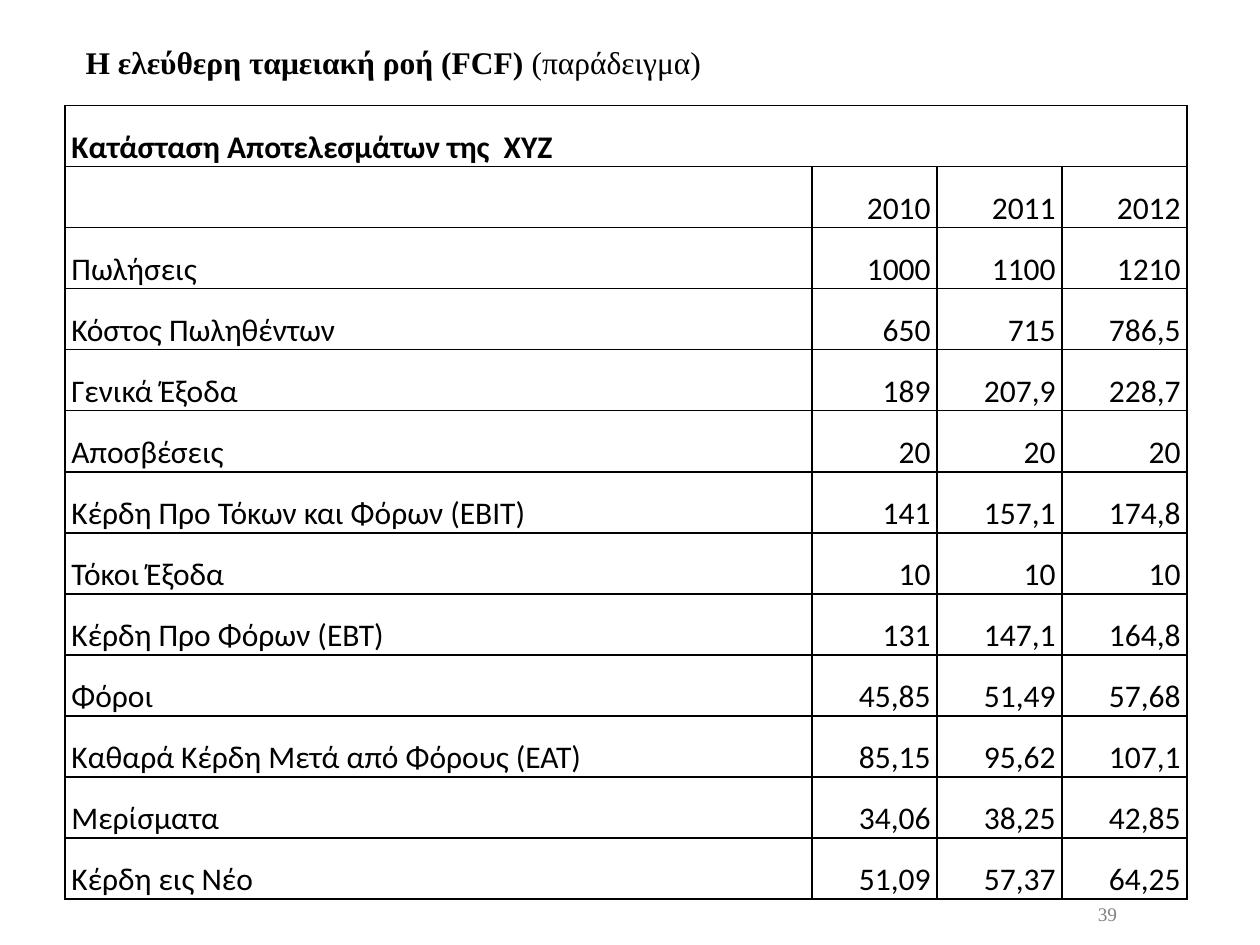
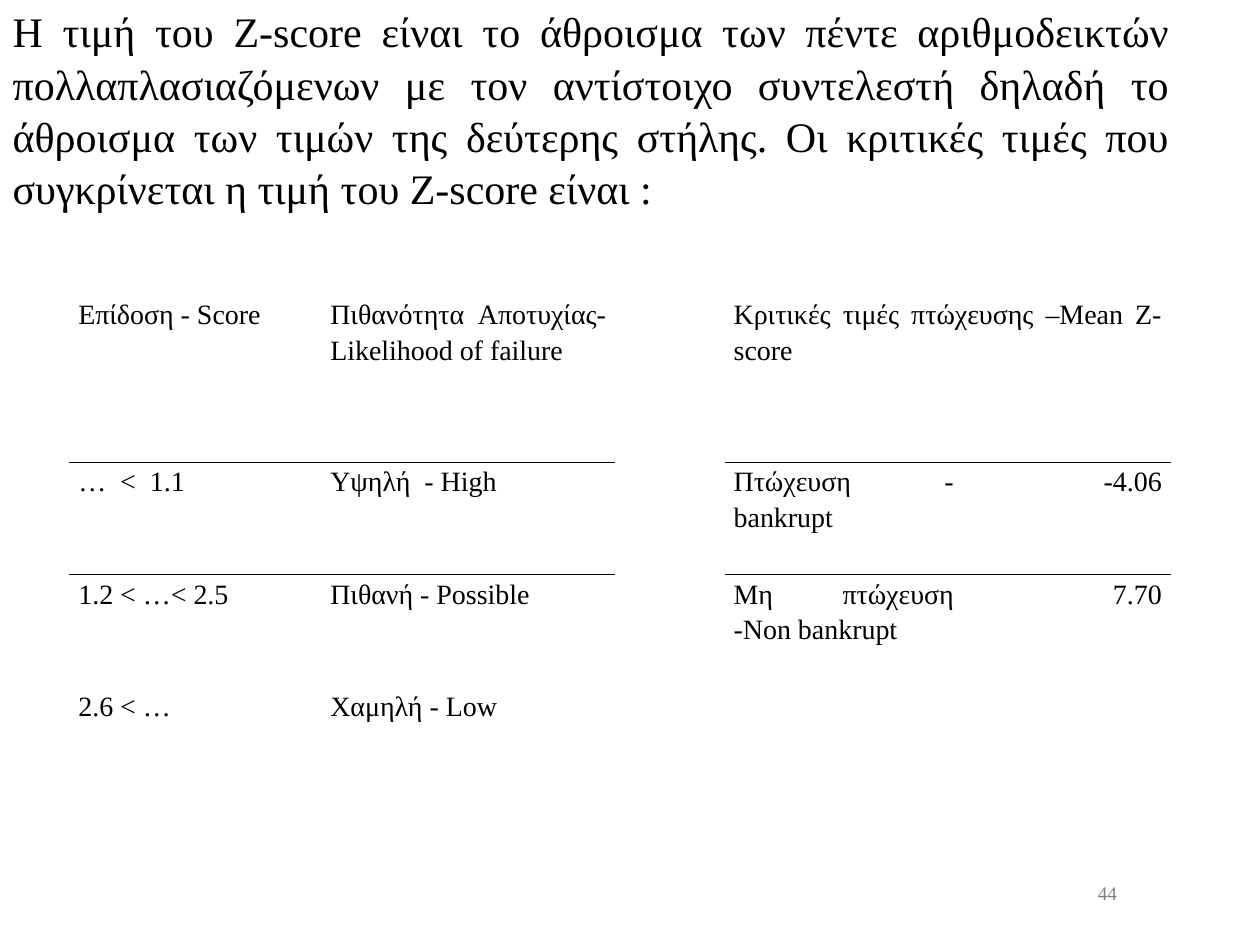
"""Builds two finance slides: an income statement and the Z-score critical values."""
from lxml.etree import SubElement
from pptx import Presentation
from pptx.dml.color import RGBColor
from pptx.enum.text import MSO_ANCHOR, MSO_AUTO_SIZE, PP_ALIGN
from pptx.oxml.ns import qn
from pptx.util import Cm, Pt

COLORS = {"text": "000000", "rule": "000000", "page": "808080"}
SERIF, SANS = "Times New Roman", "Calibri"
NO_STYLE = "{2D5ABB26-0587-4C30-8999-92F81FD0307C}"


def format_text(paragraph, font, size, align, color="text"):
    paragraph.alignment = align
    for run in paragraph.runs:
        run.font.name = font
        run.font.size = Pt(size)
        run.font.color.rgb = RGBColor.from_string(COLORS[color])


def add_grid(slide, rows, left, top, widths, heights, font, size, margin, spacing, anchor, borders):
    total_width, total_height = sum(widths), sum(heights)
    grid = slide.shapes.add_table(len(rows), len(widths), Cm(left), Cm(top),
                                  Cm(total_width), Cm(total_height)).table
    grid.first_row = grid.horz_banding = False
    grid._tbl.tblPr.find(qn("a:tableStyleId")).text = NO_STYLE
    for column, width in zip(grid.columns, widths):
        column.width = Cm(width)
    for row, height in zip(grid.rows, heights):
        row.height = Cm(height)
    for r, values in enumerate(rows):
        for c, value in enumerate(values):
            cell = grid.cell(r, c)
            cell.margin_left = cell.margin_right = Cm(margin)
            cell.margin_top = cell.margin_bottom = 0
            cell.vertical_anchor = anchor
            for side in borders(r, c):
                line = SubElement(cell._tc.get_or_add_tcPr(), qn(f"a:ln{side}"), w=str(Pt(1)))
                SubElement(SubElement(line, qn("a:solidFill")), qn("a:srgbClr"), val=COLORS["rule"])
            cell.fill.background()
            if value:
                cell.text_frame.text = value
                paragraph = cell.text_frame.paragraphs[0]
                paragraph.line_spacing = spacing
                is_number = value.lstrip("-").replace(",", "").replace(".", "").isdigit()
                format_text(paragraph, font, size, PP_ALIGN.RIGHT if is_number else PP_ALIGN.JUSTIFY)
    return grid


income_rows = [
    ("Κατάσταση Αποτελεσμάτων της  XYZ", "", "", ""),
    ("", "2010", "2011", "2012"),
    ("Πωλήσεις", "1000", "1100", "1210"),
    ("Κόστος Πωληθέντων", "650", "715", "786,5"),
    ("Γενικά Έξοδα", "189", "207,9", "228,7"),
    ("Αποσβέσεις", "20", "20", "20"),
    ("Κέρδη Προ Τόκων και Φόρων (EBIT)", "141", "157,1", "174,8"),
    ("Τόκοι Έξοδα", "10", "10", "10"),
    ("Κέρδη Προ Φόρων (EBT)", "131", "147,1", "164,8"),
    ("Φόροι", "45,85", "51,49", "57,68"),
    ("Καθαρά Κέρδη Μετά από Φόρους (EAT)", "85,15", "95,62", "107,1"),
    ("Μερίσματα", "34,06", "38,25", "42,85"),
    ("Κέρδη εις Νέο", "51,09", "57,37", "64,25"),
]
score_rows = [
    ("Επίδοση - Score", "Πιθανότητα Αποτυχίας- Likelihood of failure", "",
     "Κριτικές τιμές πτώχευσης –Mean Z-score", ""),
    ("…  <  1.1", "Υψηλή  - High", "", "Πτώχευση - bankrupt", "-4.06"),
    ("1.2 < …< 2.5", "Πιθανή - Possible", "", "Μη πτώχευση -Non bankrupt", "7.70"),
    ("2.6 < …", "Χαμηλή - Low", "", "", ""),
]
headings = [
    (("Η ελεύθερη ταμειακή ροή (FCF)", " (παράδειγμα)"), (1.47, 0.74, 22.43, 1.02),
     18, PP_ALIGN.LEFT, MSO_ANCHOR.TOP, 1, "39", 18.21),
    (("Η τιμή του Z-score είναι το άθροισμα των πέντε αριθμοδεικτών πολλαπλασιαζόμενων με τον "
      "αντίστοιχο συντελεστή δηλαδή το άθροισμα των τιμών της δεύτερης στήλης. Οι κριτικές τιμές "
      "που συγκρίνεται η τιμή του Z-score είναι :",), (0, 0, 23.83, 4.37),
     24, PP_ALIGN.JUSTIFY, MSO_ANCHOR.MIDDLE, 1.04, "44", 17.78),
]

deck = Presentation()
deck.slide_width, deck.slide_height = Cm(25.4), Cm(19.05)

for parts, place, size, align, anchor, spacing, page, page_top in headings:
    slide = deck.slides.add_slide(deck.slide_layouts[5])
    title = slide.shapes.title
    title.left, title.top, title.width, title.height = map(Cm, place)
    title.text_frame.auto_size = MSO_AUTO_SIZE.NONE
    title.text_frame.word_wrap = True
    title.text_frame.vertical_anchor = anchor
    heading = title.text_frame.paragraphs[0]
    heading.line_spacing = spacing
    for part in parts:
        heading.add_run().text = part
    heading.runs[0].font.bold = len(parts) > 1
    format_text(heading, SERIF, size, align)

    page_number = slide.shapes.add_textbox(Cm(21.59), Cm(page_top), Cm(1.47), Cm(0.43)).text_frame
    page_number.margin_left = page_number.margin_right = 0
    page_number.margin_top = page_number.margin_bottom = 0
    page_number.word_wrap = True
    page_number.vertical_anchor = MSO_ANCHOR.MIDDLE
    page_number.text = page
    format_text(page_number.paragraphs[0], SERIF, 11, PP_ALIGN.CENTER, "page")

income_slide, score_slide = deck.slides

income = add_grid(income_slide, income_rows, 1.31, 2.13, [15.06] + [2.52] * 3,
                  [1.23] * len(income_rows), SANS, 18, 0.13, 1.5, MSO_ANCHOR.BOTTOM,
                  lambda r, c: "LRTB")
income.cell(0, 0).merge(income.cell(0, 3))
income.cell(0, 0).text_frame.paragraphs[0].runs[0].font.bold = True

scores = add_grid(score_slide, score_rows, 1.4, 5.94, [5.08, 5.92, 2.21, 4.8, 4.19],
                  [3.38, 2.26, 2.26, 1.13], SERIF, 16, 0.18, 1.15, MSO_ANCHOR.TOP,
                  lambda r, c: {0: "B", 1: "T"}.get(r, "") if c != 2 else "")
scores.cell(0, 2).merge(scores.cell(3, 2))
scores.cell(0, 3).merge(scores.cell(0, 4))

deck.save("out.pptx")
